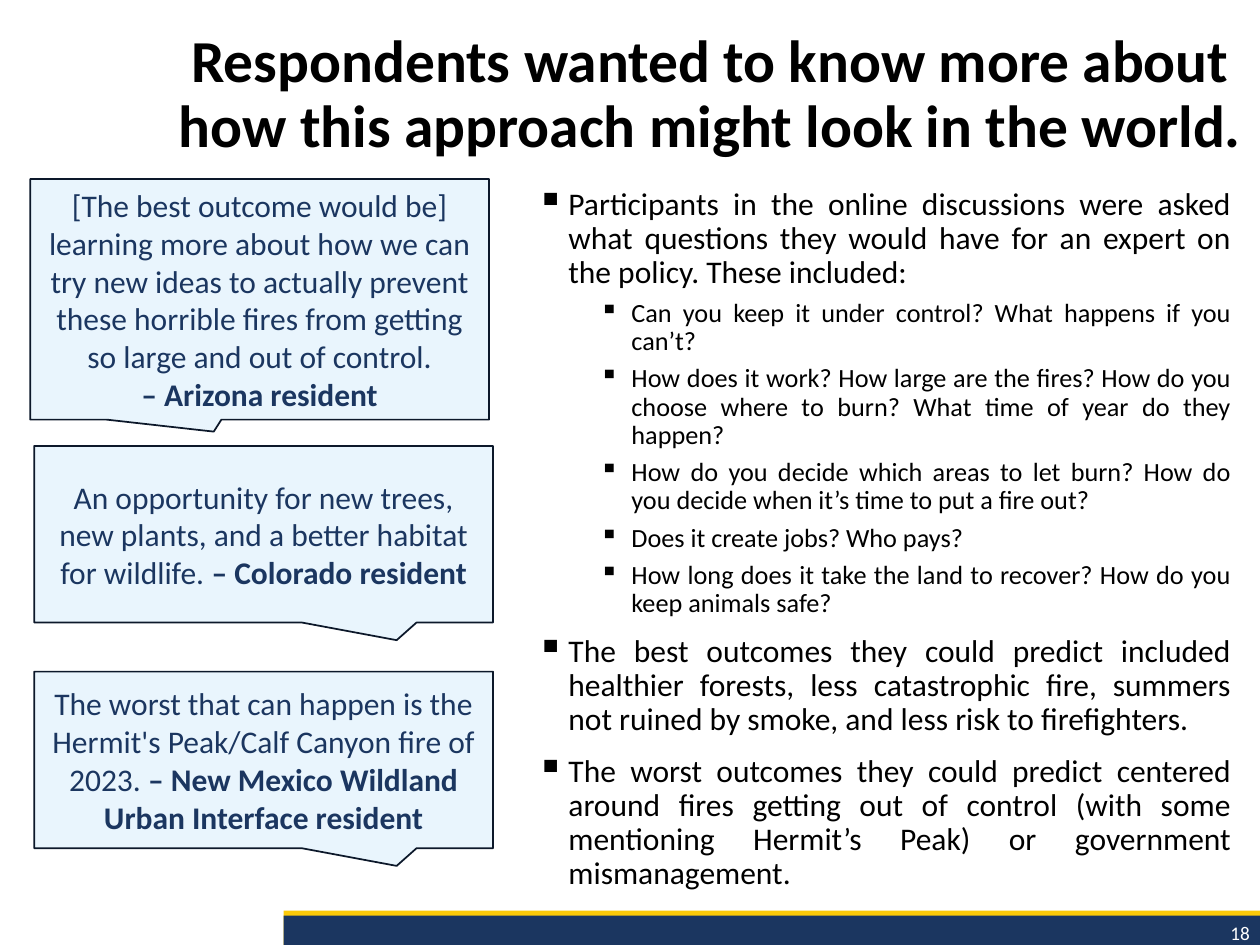
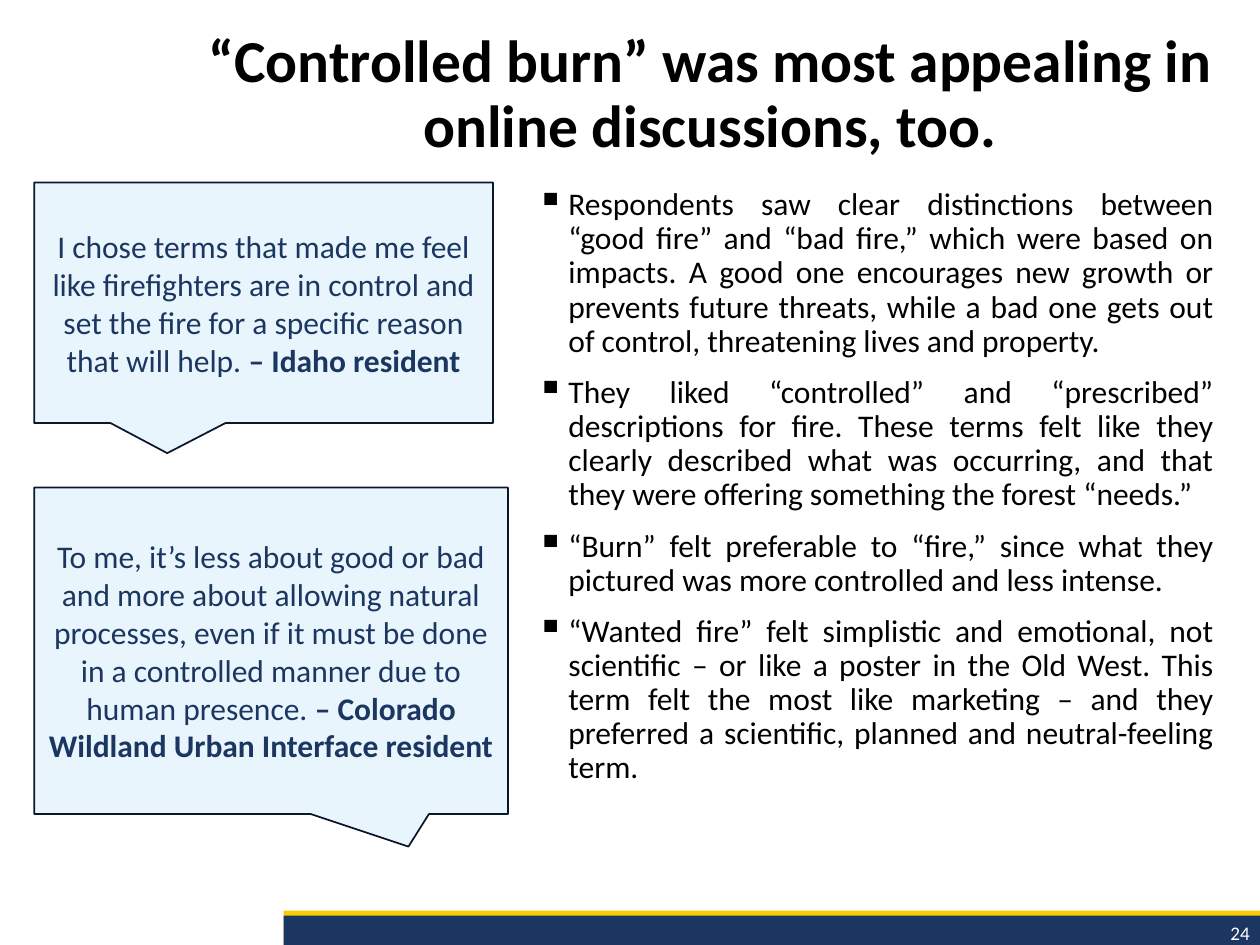
from pptx import Presentation
from pptx.dml.color import RGBColor
from pptx.enum.shapes import MSO_SHAPE as SHAPE
from pptx.enum.text import MSO_ANCHOR as ANCHOR, MSO_AUTO_SIZE as AUTO_SIZE, PP_ALIGN as ALIGN
from pptx.oxml.ns import qn
from pptx.util import Cm, Pt
from lxml.etree import SubElement

FONT = "Calibri"
BLACK = RGBColor(0x00, 0x00, 0x00)
WHITE = RGBColor(0xFF, 0xFF, 0xFF)
NAVY = RGBColor(0x1B, 0x36, 0x60)
GOLD = RGBColor(0xFC, 0xCA, 0x09)
PALE_BLUE = RGBColor(0xE9, 0xF5, 0xFD)
OUTLINE = RGBColor(0x0C, 0x18, 0x2A)

# Boxes are left, top, width, height in centimetres
TITLE_BOX = (3.23, 0.51, 22.17, 3.15)
NUMBER_BOX = (21.69, 18.44, 3.76, 0.74)
FOOTER_BANDS = [
    ((5.72, 18.36, 19.68, 0.69), GOLD),
    ((5.72, 18.46, 19.68, 0.59), NAVY),
]

# Per bullet level: text size, left indent in cm, space before, bullet size in %
LEVELS = [(18, 0.64, 10, 120), (15, 1.91, 5, 100)]
HANGING = 0.64

# Callout tails: tip offset from the centre, as a share of width and height
TAIL_SHORT = (-0.1, 0.55)
TAIL_LEFT = (-0.21, 0.625)
TAIL_RIGHT = (0.29, 0.6)

SLIDES = [
    {
        "title": "Respondents wanted to know more about how this approach might look in the world.",
        "number": "18",
        "body_box": (10.57, 3.68, 14.5, 12.32),
        "bullets": [
            (0, "Participants in the online discussions were asked what questions they would "
                "have for an expert on the policy. These included:"),
            (1, "Can you keep it under control? What happens if you can’t?"),
            (1, "How does it work? How large are the fires? How do you choose where to burn? "
                "What time of year do they happen?"),
            (1, "How do you decide which areas to let burn? How do you decide when it’s time "
                "to put a fire out?"),
            (1, "Does it create jobs? Who pays?"),
            (1, "How long does it take the land to recover? How do you keep animals safe?"),
            (0, "The best outcomes they could predict included healthier forests, less "
                "catastrophic fire, summers not ruined by smoke, and less risk to firefighters."),
            (0, "The worst outcomes they could predict centered around fires getting out of "
                "control (with some mentioning Hermit’s Peak) or government mismanagement."),
        ],
        "quotes": [
            ((0.61, 3.61, 9.25, 4.85), TAIL_SHORT,
             "[The best outcome would be] learning more about how we can try new ideas to "
             "actually prevent these horrible fires from getting so large and out of control.\v",
             "– Arizona resident"),
            ((0.69, 8.99, 9.25, 3.56), TAIL_RIGHT,
             "An opportunity for new trees, new plants, and a better habitat for wildlife. ",
             "– Colorado resident"),
            ((0.69, 13.54, 9.25, 3.56), TAIL_RIGHT,
             "The worst that can happen is the Hermit's Peak/Calf Canyon fire of 2023. ",
             "– New Mexico Wildland Urban Interface resident"),
        ],
    },
    {
        "title": "“Controlled burn” was most appealing in online discussions, too.",
        "number": "24",
        "body_box": (10.57, 3.68, 14.15, 13.36),
        "bullets": [
            (0, "Respondents saw clear distinctions between “good fire” and “bad fire,” which "
                "were based on impacts. A good one encourages new growth or prevents future "
                "threats, while a bad one gets out of control, threatening lives and property."),
            (0, "They liked “controlled” and “prescribed” descriptions for fire. These terms "
                "felt like they clearly described what was occurring, and that they were "
                "offering something the forest “needs.”"),
            (0, "“Burn” felt preferable to “fire,” since what they pictured was more "
                "controlled and less intense."),
            (0, "“Wanted fire” felt simplistic and emotional, not scientific – or like a "
                "poster in the Old West. This term felt the most like marketing – and they "
                "preferred a scientific, planned and neutral-feeling term."),
        ],
        "quotes": [
            ((0.69, 3.68, 9.25, 4.85), TAIL_LEFT,
             "I chose terms that made me feel like firefighters are in control and set the "
             "fire for a specific reason that will help. ",
             "– Idaho resident"),
            ((0.69, 9.83, 9.55, 6.58), TAIL_RIGHT,
             "To me, it’s less about good or bad and more about allowing natural processes, "
             "even if it must be done in a controlled manner due to human presence. ",
             "– Colorado Wildland Urban Interface resident"),
        ],
    },
]


def cm(box):
    return [Cm(v) for v in box]


def format_runs(p, size, color, bold=False):
    for r in p.runs:
        r.font.name = FONT
        r.font.size = Pt(size)
        r.font.color.rgb = color
        r.font.bold = bold


def add_filled(slide, kind, box, fill):
    sp = slide.shapes.add_shape(kind, *cm(box))
    sp.shadow.inherit = False
    sp.fill.solid()
    sp.fill.fore_color.rgb = fill
    sp.line.fill.background()
    return sp


def add_text_frame(slide, box):
    tf = slide.shapes.add_textbox(*cm(box)).text_frame
    tf.word_wrap = True
    return tf


def add_footer(slide, number):
    for box, color in FOOTER_BANDS:
        add_filled(slide, SHAPE.RECTANGLE, box, color)
    p = add_text_frame(slide, NUMBER_BOX).paragraphs[0]
    p.text = number
    p.alignment = ALIGN.RIGHT
    format_runs(p, 11, WHITE)


def set_title(slide, text):
    title = slide.shapes.title
    title.left, title.top, title.width, title.height = cm(TITLE_BOX)
    tf = title.text_frame
    tf.text = text
    tf.word_wrap = True
    tf.auto_size = AUTO_SIZE.NONE
    tf.vertical_anchor = ANCHOR.TOP
    p = tf.paragraphs[0]
    p.alignment = ALIGN.CENTER
    p.line_spacing = 0.9
    format_runs(p, 34, BLACK, bold=True)


def set_bullet(p, indent, percent):
    pPr = p._p.get_or_add_pPr()
    pPr.set("marL", str(Cm(indent)))
    pPr.set("indent", str(-Cm(HANGING)))
    SubElement(pPr, qn("a:buSzPct"), val=str(percent * 1000))
    SubElement(pPr, qn("a:buChar"), char="▪")


def add_bullets(slide, box, bullets):
    tf = add_text_frame(slide, box)
    for i, (level, text) in enumerate(bullets):
        size, indent, before, percent = LEVELS[level]
        p = tf.add_paragraph() if i else tf.paragraphs[0]
        p.text = text
        p.level = level
        set_bullet(p, indent, percent)
        p.alignment = ALIGN.JUSTIFY
        p.line_spacing = 0.9
        p.space_before = Pt(before if i else 0)
        format_runs(p, size, BLACK)


def add_quote(slide, box, tail, quote, speaker):
    sp = add_filled(slide, SHAPE.RECTANGULAR_CALLOUT, box, PALE_BLUE)
    sp.adjustments[0], sp.adjustments[1] = tail
    sp.line.color.rgb = OUTLINE
    sp.line.width = Pt(1)
    tf = sp.text_frame
    tf.word_wrap = True
    tf.vertical_anchor = ANCHOR.MIDDLE
    p = tf.paragraphs[0]
    p.text = quote
    p.alignment = ALIGN.CENTER
    r = p.add_run()
    r.text = speaker
    format_runs(p, 18, NAVY)
    r.font.bold = True


def main():
    prs = Presentation()
    prs.slide_width, prs.slide_height = Cm(25.4), Cm(19.05)
    title_only = prs.slide_layouts[5]
    for content in SLIDES:
        slide = prs.slides.add_slide(title_only)
        add_footer(slide, content["number"])
        set_title(slide, content["title"])
        add_bullets(slide, content["body_box"], content["bullets"])
        for quote in content["quotes"]:
            add_quote(slide, *quote)
    prs.save("out.pptx")


if __name__ == "__main__":
    main()
